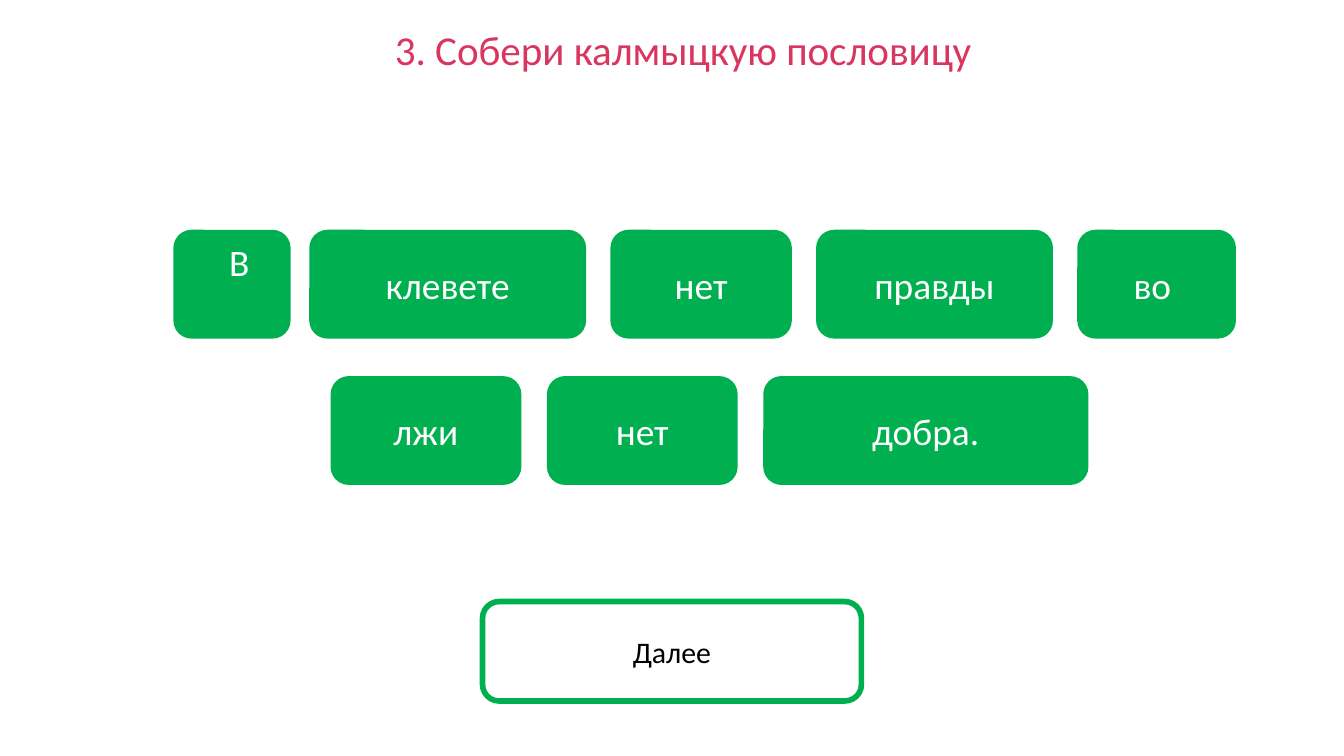
from pptx import Presentation
from pptx.dml.color import RGBColor
from pptx.enum.shapes import MSO_SHAPE as Kind
from pptx.enum.text import MSO_ANCHOR as Anchor, MSO_AUTO_SIZE as Fit, PP_ALIGN as Align
from pptx.util import Pt

GREEN = "00B050"


def style(par, size, color):
    par.alignment = Align.CENTER
    par.font.name = "Calibri"
    par.font.size = Pt(size)
    par.font.color.rgb = RGBColor.from_string(color)


def button(text, left, top, width, height, size, color):
    box = slide.shapes.add_shape(
        Kind.ROUNDED_RECTANGLE, Pt(left), Pt(top), Pt(width), Pt(height))
    box.shadow.inherit = False
    frame = box.text_frame
    frame.word_wrap = True
    frame.vertical_anchor = Anchor.MIDDLE
    frame.margin_left = frame.margin_right = Pt(27)
    frame.margin_top = frame.margin_bottom = Pt(14)
    frame.text = text
    style(frame.paragraphs[0], size, color)
    return box


deck = Presentation()
deck.slide_width, deck.slide_height = Pt(720), Pt(405)
slide = deck.slides.add_slide(deck.slide_layouts[5])

# Title
title = slide.shapes.title
title.left, title.top, title.width, title.height = Pt(118), Pt(9.4), Pt(496), Pt(33.8)
frame = title.text_frame
frame.auto_size = Fit.NONE
frame.vertical_anchor = Anchor.TOP
frame.text = "3. Собери калмыцкую пословицу"
style(frame.paragraphs[0], 22, "D9365F")

# Word tiles: left, top, gap, then each word with its width
rows = [
    (92.9, 123.1, 0, [("В ", 62.8)]),
    (165.7, 123.1, 13, [("клевете", 148.3), ("нет", 97.2), ("правды", 126.9), ("во ", 85)]),
    (177.1, 201.5, 13.7, [("лжи", 102.2), ("нет", 102.2), ("добра.", 174.2)]),
]
for left, top, gap, words in rows:
    for word, width in words:
        tile = button(word, left, top, width, 58.3, 20, "FFFFFF")
        tile.fill.solid()
        tile.fill.fore_color.rgb = RGBColor.from_string(GREEN)
        tile.line.fill.background()
        left += width + gap

# Next button
more = button("Далее", 258.5, 322.3, 203, 53.3, 16, "000000")
more.fill.background()
more.line.color.rgb = RGBColor.from_string(GREEN)
more.line.width = Pt(3)

deck.save("out.pptx")
